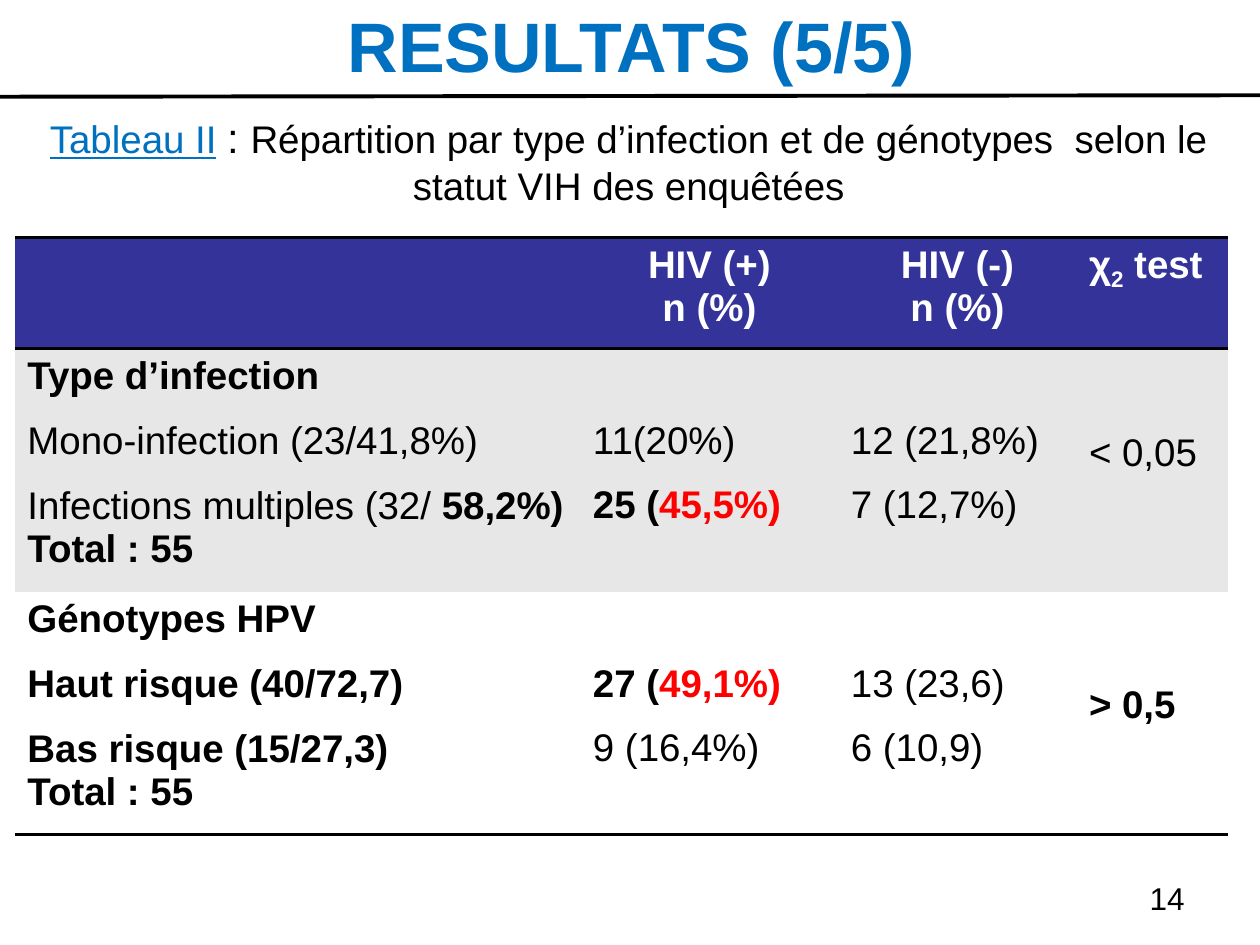
from lxml import etree
from pptx import Presentation
from pptx.dml.color import RGBColor
from pptx.enum import text
from pptx.oxml import ns
from pptx.util import Cm, Pt

BLUE = RGBColor(0x00, 0x70, 0xC0)
NAVY = RGBColor(0x33, 0x33, 0x99)
GREY = RGBColor(0xE7, 0xE7, 0xE7)
WHITE = RGBColor(0xFF, 0xFF, 0xFF)
BLACK = RGBColor(0x00, 0x00, 0x00)
RED = RGBColor(0xFF, 0x00, 0x00)
CENTER, RIGHT = text.PP_ALIGN.CENTER, text.PP_ALIGN.RIGHT
BOLD = {"bold": True}
RED_BOLD = {"bold": True, "color": RED}


def add_run(paragraph, words, size=22, color=BLACK, bold=False,
            underline=False, baseline=None):
    run = paragraph.add_run()
    run.text = words
    font = run.font
    font.name, font.size, font.bold = "Arial", Pt(size), bold
    font.color.rgb = color
    if underline:
        font.underline = True
    if baseline:
        run._r.get_or_add_rPr().set("baseline", str(baseline))


def write(frame, lines, align=None, spacing=None, **style):
    """Write lines, each a list of (words, format) runs."""
    for i, runs in enumerate(lines):
        paragraph = frame.paragraphs[0] if i == 0 else frame.add_paragraph()
        paragraph.alignment = align
        paragraph.space_before = Pt(0)
        paragraph.line_spacing = spacing[i] if spacing else 1.0
        for words, changes in runs:
            add_run(paragraph, words, **{**style, **changes})


def place(shape, left, top, width, height):
    shape.left, shape.top, shape.width, shape.height = (
        Cm(left), Cm(top), Cm(width), Cm(height))


def header(slide, left, top, width, height):
    # Title
    title = slide.shapes.title
    place(title, left + 1.1, top - 0.08, width - 2.15, height)
    title.text_frame.vertical_anchor = text.MSO_ANCHOR.MIDDLE
    write(title.text_frame, [[("RESULTATS (5/5)", {})]],
          align=CENTER, size=40, color=BLUE, bold=True)
    # Rule under the title
    rule = slide.shapes.add_connector(1, Cm(left), Cm(top + height),
                                      Cm(left + width), Cm(top + height - 0.03))
    rule.line.color.rgb = BLACK
    rule.line.width = Pt(2.25)
    etree.SubElement(rule._element.spPr, ns.qn("a:effectLst"))


def caption(slide, left, top, width, height):
    body = slide.placeholders[1]
    place(body, left, top, width, height)
    frame = body.text_frame
    frame.vertical_anchor = text.MSO_ANCHOR.TOP
    write(frame, [[
        ("Tableau II", {"color": BLUE, "underline": True}),
        (" ", {"color": BLUE}),
        (": ", {"size": 24}),
        ("Répartition par type d’infection et de génotypes  selon le "
         "statut VIH des enquêtées", {}),
    ]], align=CENTER)
    properties = frame.paragraphs[0]._p.get_or_add_pPr()
    properties.set("marL", "0")
    properties.set("indent", "0")
    etree.SubElement(properties, ns.qn("a:buNone"))


def set_borders(cell, **visible):
    """Draw the named sides (T, B) in black and clear the others."""
    properties = cell._tc.get_or_add_tcPr()
    for side in "LRTB":
        line = etree.SubElement(properties, ns.qn("a:ln" + side), w=str(Pt(2)))
        if visible.get(side):
            fill = etree.SubElement(line, ns.qn("a:solidFill"))
            etree.SubElement(fill, ns.qn("a:srgbClr"), val=str(BLACK))
        else:
            etree.SubElement(line, ns.qn("a:noFill"))


def results_table(slide, left, top, widths, heights):
    table = slide.shapes.add_table(
        len(heights), len(widths), Cm(left), Cm(top),
        Cm(sum(widths)), Cm(sum(heights))).table
    table.first_row = table.horz_banding = False
    for column, width in zip(table.columns, widths):
        column.width = Cm(width)
    for row, height in zip(table.rows, heights):
        row.height = Cm(height)

    # Borders and row colours
    for r, fill in enumerate((NAVY, GREY, WHITE)):
        for cell in table.rows[r].cells:
            set_borders(cell, T=r < 2, B=r != 1)
            cell.fill.solid()
            cell.fill.fore_color.rgb = fill

    # Column headings
    for c, status in ((1, "HIV (+)"), (2, "HIV (-)")):
        write(table.cell(0, c).text_frame, [[(status, {})], [("n (%)", {})]],
              align=CENTER, color=WHITE, bold=True)
    write(table.cell(0, 3).text_frame,
          [[("χ", {}), ("2", {"baseline": -25000}), (" test", {})]],
          color=WHITE, bold=True)

    # Groups: labels, HIV (+), HIV (-), test result and its top margin
    groups = [
        ([[("Type d’infection", BOLD)],
          [("Mono-infection (23/41,8%)", {})],
          [("Infections multiples (32/ ", {}), ("58,2%)", BOLD)],
          [("Total : 55", BOLD)]],
         [[("11(20%)", {})], [("25 (", BOLD), ("45,5%)", RED_BOLD)]],
         [[("12 (21,8%)", {})], [("7 (12,7%)", {})]],
         [[("< 0,05", {})]], 1.68),
        ([[("Génotypes HPV", BOLD)],
          [("Haut risque (40/72,7)", BOLD)],
          [("Bas risque (15/27,3)", BOLD)],
          [("Total : 55", BOLD)]],
         [[("27 (", BOLD), ("49,1%)", RED_BOLD)], [("9 (16,4%)", {})]],
         [[("13 (23,6)", {})], [("6 (10,9)", {})]],
         [[("> 0,5", BOLD)]], 1.85),
    ]
    for r, (labels, positive, negative, test, test_margin) in enumerate(groups, 1):
        write(table.cell(r, 0).text_frame, labels, spacing=(1, 1.5, 1.5, 1))
        for c, values in ((1, positive), (2, negative)):
            table.cell(r, c).margin_top = Cm(1.42)
            write(table.cell(r, c).text_frame, values, spacing=(1, 1.5))
        table.cell(r, 3).margin_top = Cm(test_margin)
        write(table.cell(r, 3).text_frame, test)


def page_number(slide, left, top, width, height):
    box = slide.shapes.add_textbox(Cm(left), Cm(top), Cm(width), Cm(height))
    box.text_frame.word_wrap = True
    write(box.text_frame, [[("14", {})]], align=RIGHT, size=18)


def main():
    deck = Presentation()
    deck.slide_width, deck.slide_height = Cm(25.4), Cm(19.05)
    slide = deck.slides.add_slide(deck.slide_layouts[1])
    header(slide, 0, 0, 25.4, 1.95)
    caption(slide, 0.6, 2.13, 24.15, 2.3)
    results_table(slide, 0.3, 4.78, (11.4, 5.2, 4.8, 3.05), (2.25, 4.9, 4.9))
    page_number(slide, 18.2, 17.6, 5.93, 1.32)
    deck.save("out.pptx")


if __name__ == "__main__":
    main()
